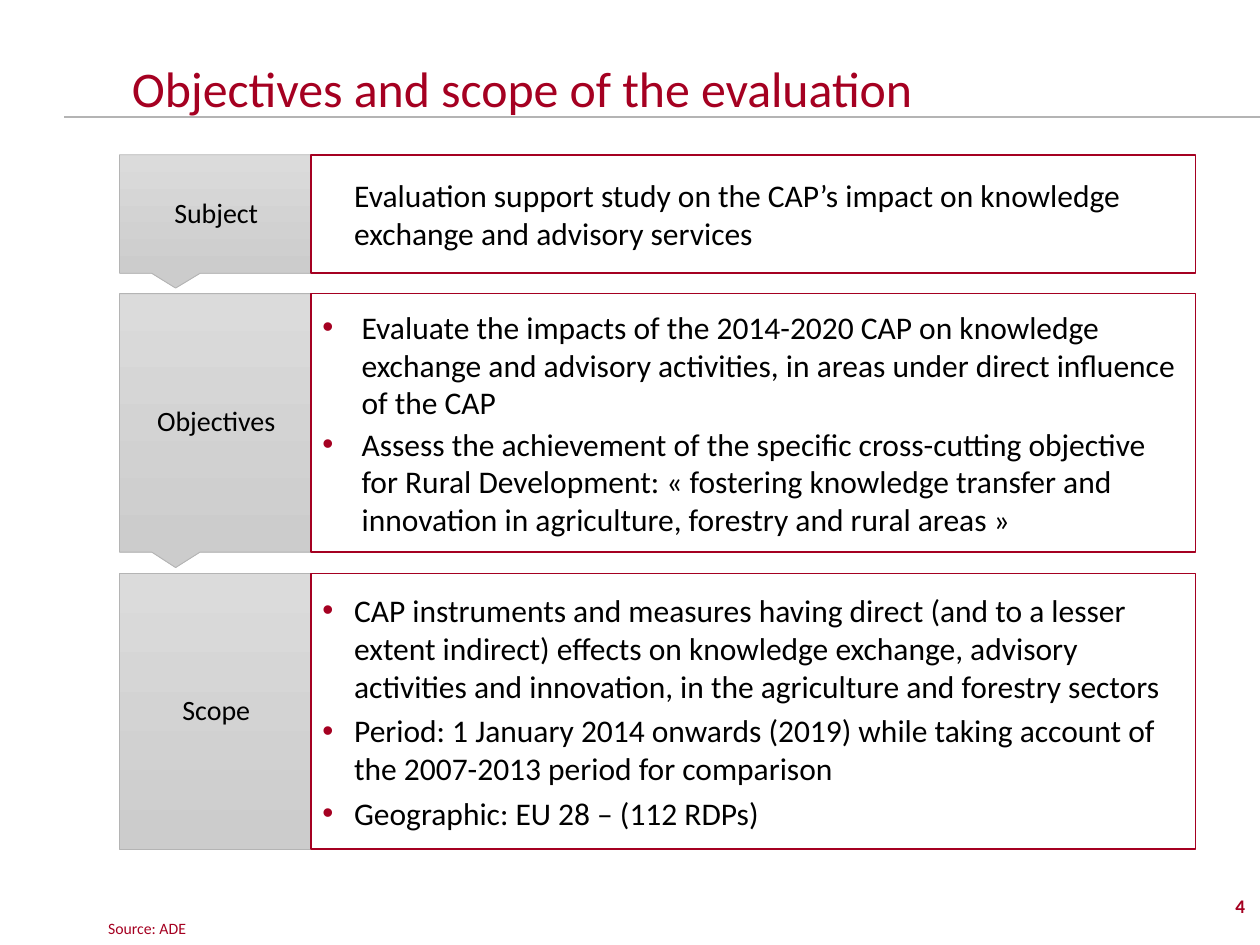
from lxml.etree import SubElement
from pptx import Presentation
from pptx.dml.color import RGBColor
from pptx.enum.shapes import MSO_CONNECTOR, MSO_SHAPE
from pptx.enum.text import MSO_ANCHOR, PP_ALIGN
from pptx.oxml.ns import qn
from pptx.util import Cm, Pt

RED, GREY, BLACK, WHITE = "A50021", "B4B4B4", "000000", "FFFFFF"
rgb = RGBColor.from_string


def write(shape, *paragraphs, size, color, bold=False, align=PP_ALIGN.LEFT,
          anchor=MSO_ANCHOR.MIDDLE, spacing=None, before=0, indent=0,
          bullets=False, insets=(0.25, 0.13)):
    """Fill a shape with paragraphs; indent and insets are in cm."""
    frame = shape.text_frame
    frame.word_wrap = True
    frame.vertical_anchor = anchor
    frame.margin_left = frame.margin_right = Cm(insets[0])
    frame.margin_top = frame.margin_bottom = Cm(insets[1])
    for i, text in enumerate(paragraphs):
        paragraph = frame.add_paragraph() if i else frame.paragraphs[0]
        properties = paragraph._p.get_or_add_pPr()
        if indent:
            properties.set("marL", str(Cm(indent)))
        if bullets:
            properties.set("indent", str(-Cm(indent)))
            bullet_color = SubElement(properties, qn("a:buClr"))
            SubElement(bullet_color, qn("a:srgbClr"), val=RED)
            SubElement(properties, qn("a:buFont"), typeface="Arial")
            SubElement(properties, qn("a:buChar"), char="•")
        paragraph.alignment = align
        paragraph.space_before = Pt(before if i else 0)
        if spacing:
            paragraph.line_spacing = spacing
        run = paragraph.add_run()
        run.text = text
        run.font.name = "Calibri"
        run.font.size = Pt(size)
        run.font.bold = bold
        run.font.color.rgb = rgb(color)


deck = Presentation()
deck.slide_width, deck.slide_height = Cm(25.4), Cm(19.05)
slide = deck.slides.add_slide(deck.slide_layouts[5])
shapes = slide.shapes

# Heading and its rule
title = shapes.title
title.left, title.top, title.width, title.height = Cm(2.41), Cm(0), Cm(23.06), Cm(2.51)
write(title, "Objectives and scope of the evaluation", size=28.5, color=RED,
      anchor=MSO_ANCHOR.BOTTOM, spacing=0.9)

rule = shapes.add_connector(MSO_CONNECTOR.STRAIGHT, Cm(1.3), Cm(2.36), Cm(25.4), Cm(2.36))
rule.line.color.rgb = rgb(GREY)
rule.line.width = Pt(1.5)
SubElement(rule._element.spPr, qn("a:effectLst"))

# Rows: label, label outline, pointer, top, height, text format, text
CALLOUT = MSO_SHAPE.RECTANGULAR_CALLOUT
rows = [
    ("Subject", CALLOUT, 0.625, 3.12, 2.39, dict(indent=0.64), [
        "Evaluation support study on the CAP’s impact on knowledge exchange and advisory services",
    ]),
    ("Objectives", CALLOUT, 0.56, 5.92, 5.21, dict(indent=0.79, bullets=True, before=2), [
        "Evaluate the impacts of the 2014-2020 CAP on knowledge exchange and advisory "
        "activities, in areas under direct influence of the CAP",
        "Assess the achievement of the specific cross-cutting objective for Rural Development: "
        "« fostering knowledge transfer and innovation in agriculture, forestry and rural areas »",
    ]),
    ("Scope", MSO_SHAPE.RECTANGLE, None, 11.56, 5.56, dict(indent=0.64, bullets=True, before=4), [
        "CAP instruments and measures having direct (and to a lesser extent indirect) effects on "
        "knowledge exchange, advisory activities and innovation, in the agriculture and "
        "forestry sectors",
        "Period: 1 January 2014 onwards (2019) while taking account of the 2007-2013 period "
        "for comparison",
        "Geographic: EU 28 – (112 RDPs)",
    ]),
]
for name, outline, pointer, top, height, text_format, points in rows:
    label = shapes.add_shape(outline, Cm(2.41), Cm(top), Cm(3.9), Cm(height))
    label.shadow.inherit = False
    if pointer:
        label.adjustments[0], label.adjustments[1] = -0.21, pointer
    label.fill.gradient()
    label.fill.gradient_angle = 270
    for stop, shade in zip(label.fill.gradient_stops, ("DBDBDB", "CCCCCC")):
        stop.color.rgb = rgb(shade)
    label.line.color.rgb = rgb(GREY)
    label.line.width = Pt(0.5)
    write(label, name, size=16, color=BLACK, align=PP_ALIGN.CENTER, spacing=0.9,
          insets=(0.18, 0.18))

    content = shapes.add_shape(MSO_SHAPE.RECTANGLE, Cm(6.27), Cm(top), Cm(17.83), Cm(height))
    content.shadow.inherit = False
    content.fill.solid()
    content.fill.fore_color.rgb = rgb(WHITE)
    content.line.color.rgb = rgb(RED)
    content.line.width = Pt(1)
    write(content, *points, size=18, color=BLACK, insets=(0.23, 0.1), **text_format)

# Footer
source = shapes.add_textbox(Cm(1.93), Cm(18.01), Cm(11.96), Cm(1.02))
write(source, "Source: ADE", size=9, color=RED, anchor=MSO_ANCHOR.BOTTOM)

page_number = shapes.add_textbox(Cm(19.89), Cm(17.6), Cm(5.46), Cm(1.02))
write(page_number, "4", size=11, color=RED, bold=True, align=PP_ALIGN.RIGHT,
      anchor=MSO_ANCHOR.BOTTOM)

deck.save("out.pptx")
